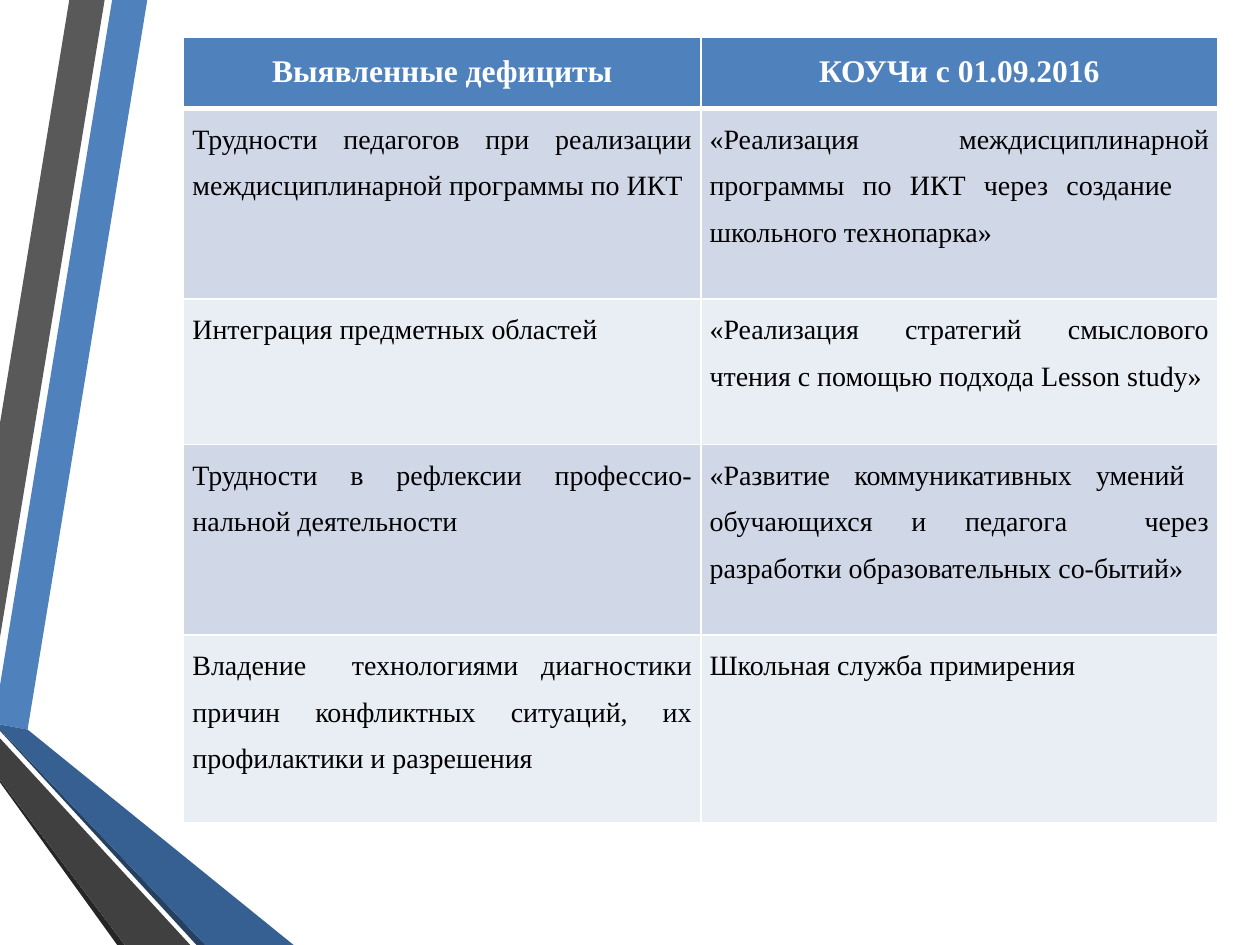
from pptx import Presentation
from pptx.dml.color import RGBColor
from pptx.enum import text
from pptx.oxml import parse_xml
from pptx.oxml.ns import nsdecls
from pptx.util import Pt


def paint(fill, colour):
    fill.solid()
    fill.fore_color.rgb = RGBColor.from_string(colour)


def add_border(cell, side, width, colour):
    # Borders come before the fill in the cell properties
    cell._tc.get_or_add_tcPr().append(parse_xml(
        f'<a:{side} {nsdecls("a")} w="{Pt(width)}"><a:solidFill>'
        f'<a:srgbClr val="{colour}"/></a:solidFill></a:{side}>'))


deck = Presentation()
deck.slide_width, deck.slide_height = Pt(720), Pt(540)
page = deck.slides.add_slide(deck.slide_layouts[6])

# Folded ribbons along the left edge, from back to front
ribbons = [
    ("4F81BD", [(0, 391.7), (0, 414), (15.8, 416.9), (84.2, 0), (64.1, 0)]),
    ("595959", [(59.8, 0), (39.6, 0), (0, 241.9), (0, 364.3)]),
    ("262626", [(0, 445.7), (0, 447.1), (67, 540), (71.3, 540)]),
    ("254061", [(0, 416.9), (0, 417.6), (112.3, 540), (117.4, 540)]),
    ("376092", [(0, 416.9), (117.4, 540), (167.8, 540), (15.8, 416.9), (0, 414)]),
    ("404040", [(0, 445.7), (71.3, 540), (108.7, 540), (0, 421.9)]),
]
for colour, points in ribbons:
    start, *rest = [(Pt(x), Pt(y)) for x, y in points]
    outline = page.shapes.build_freeform(*start)
    outline.add_line_segments(rest, close=True)
    ribbon = outline.convert_to_shape()
    ribbon.shadow.inherit = False
    ribbon.line.fill.background()
    paint(ribbon.fill, colour)

# Table of deficits and the teams that address them
rows = [
    ("Выявленные дефициты", "КОУЧи с 01.09.2016"),
    ("Трудности педагогов при реализации междисциплинарной программы по ИКТ",
     "«Реализация междисциплинарной программы по ИКТ через создание   школьного технопарка»"),
    ("Интеграция предметных областей",
     "«Реализация стратегий смыслового чтения с помощью подхода Lesson study»"),
    ("Трудности в рефлексии профессио-\vнальной деятельности",
     "«Развитие коммуникативных умений  обучающихся и педагога  через разработки образовательных со-бытий»"),
    ("Владение  технологиями диагностики причин конфликтных ситуаций, их профилактики и разрешения",
     "Школьная служба примирения"),
]
heights = [41, 109, 83, 109, 107]
header = {"size": Pt(18), "bold": True, "name": "Times New Roman"}
body = {"size": Pt(16), "bold": False, "name": "Times New Roman"}
margins = {"margin_left": Pt(5), "margin_right": Pt(5), "margin_top": 0, "margin_bottom": 0}

table = page.shapes.add_table(len(rows), 2, Pt(105), Pt(21), Pt(591), Pt(sum(heights))).table
for column in table.columns:
    column.width = Pt(295.5)

for row, (height, words) in enumerate(zip(heights, rows)):
    table.rows[row].height = Pt(height)
    is_header = row == 0
    for column, wording in enumerate(words):
        cell = table.cell(row, column)
        for name, value in margins.items():
            setattr(cell, name, value)
        for side in ("lnL", "lnR", "lnT", "lnB"):
            thick = (row, side) in ((0, "lnB"), (1, "lnT"))
            add_border(cell, side, 3 if thick else 1, "FFFFFF")
        paint(cell.fill, "4F81BD" if is_header else "D0D8E8" if row % 2 else "E9EDF4")

        cell.text = wording
        para = cell.text_frame.paragraphs[0]
        para.line_spacing = 1.5
        para.alignment = text.PP_ALIGN.CENTER if is_header else text.PP_ALIGN.JUSTIFY
        for span in para.runs:
            for name, value in (header if is_header else body).items():
                setattr(span.font, name, value)
            paint(span.font.fill, "FFFFFF" if is_header else "000000")

deck.save("out.pptx")
